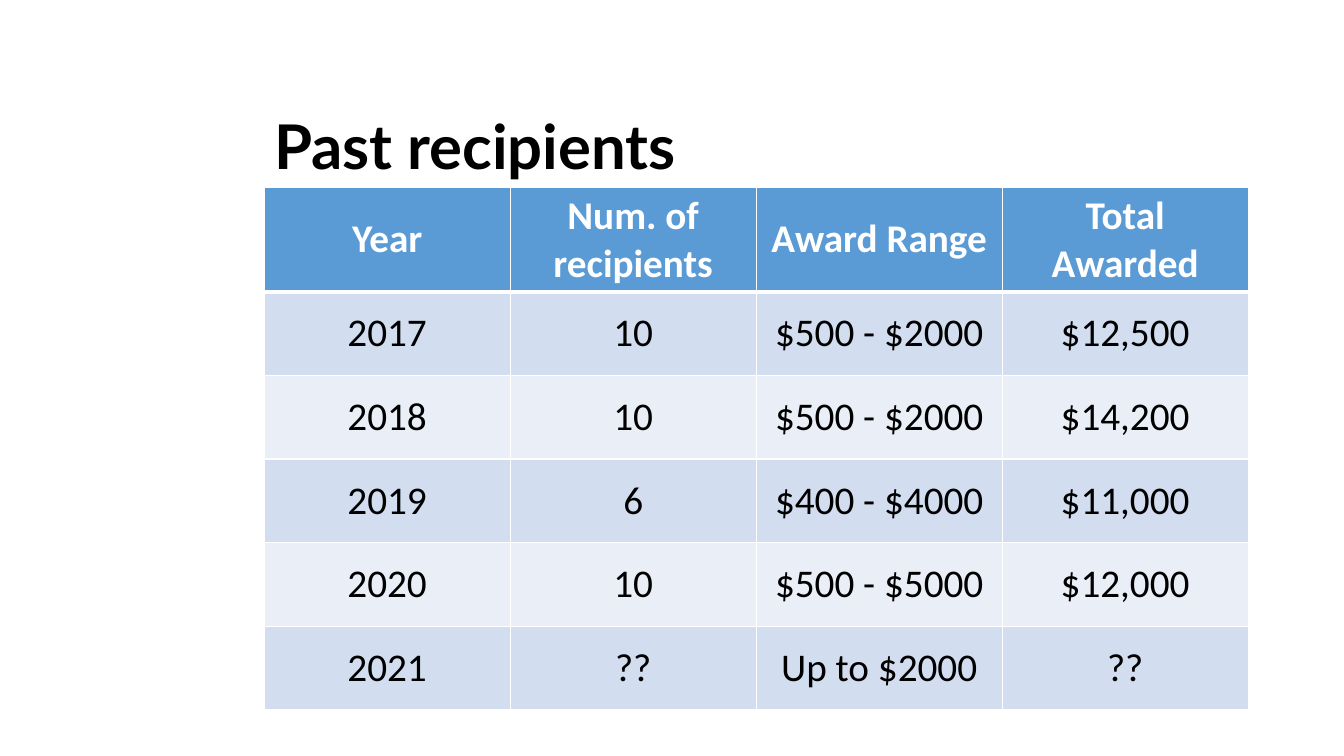
from lxml.etree import SubElement
from pptx import Presentation
from pptx.dml.color import RGBColor
from pptx.enum.text import MSO_ANCHOR, PP_ALIGN
from pptx.oxml.ns import qn
from pptx.util import Inches, Pt

COLORS = {
    "header": "5B9BD5",
    "odd": "D2DEEF",
    "even": "EAEFF7",
    "border": "FFFFFF",
    "header_text": "FFFFFF",
    "text": "000000",
}
LEFT, TABLE_TOP = 2.62, 1.86
COLUMN_WIDTH, ROW_HEIGHT = 2.44, 0.83
SLIDE_WIDTH, SLIDE_HEIGHT = 13.33, 7.5

RECIPIENTS = [
    ("Year", "Num. of recipients", "Award Range", "Total Awarded"),
    ("2017", "10", "$500 - $2000", "$12,500"),
    ("2018", "10", "$500 - $2000", "$14,200"),
    ("2019", "6", "$400 - $4000", "$11,000"),
    ("2020", "10", "$500 - $5000", "$12,000"),
    ("2021", "??", "Up to $2000", "??"),
]


def add_text(paragraph, text, font_name, size, color, bold):
    run = paragraph.add_run()
    run.text = text
    run.font.name = font_name
    run.font.size = Pt(size)
    run.font.bold = bold
    run.font.color.rgb = RGBColor.from_string(COLORS[color])


def set_borders(cell, widths):
    properties = cell._tc.get_or_add_tcPr()
    for position, (side, width) in enumerate(widths.items()):
        line = SubElement(properties, qn(f"a:{side}"), w=str(Pt(width)))
        fill = SubElement(line, qn("a:solidFill"))
        SubElement(fill, qn("a:srgbClr"), val=COLORS["border"])
        properties.insert(position, line)


presentation = Presentation()
presentation.slide_width = Inches(SLIDE_WIDTH)
presentation.slide_height = Inches(SLIDE_HEIGHT)
slide = presentation.slides.add_slide(presentation.slide_layouts[6])

title = slide.shapes.add_textbox(
    Inches(LEFT), Inches(0.76), Inches(SLIDE_WIDTH - LEFT), Inches(1.45)
)
title.text_frame.word_wrap = True
title.text_frame.vertical_anchor = MSO_ANCHOR.MIDDLE
title_paragraph = title.text_frame.paragraphs[0]
title_paragraph.line_spacing = 0.9
add_text(title_paragraph, "Past recipients", "Lato", 44, "text", True)

row_count, column_count = len(RECIPIENTS), len(RECIPIENTS[0])
table = slide.shapes.add_table(
    row_count,
    column_count,
    Inches(LEFT),
    Inches(TABLE_TOP),
    Inches(column_count * COLUMN_WIDTH),
    Inches(row_count * ROW_HEIGHT),
).table

for row_index, values in enumerate(RECIPIENTS):
    is_header = row_index == 0
    row_color = "header" if is_header else "odd" if row_index % 2 else "even"
    text_color = "header_text" if is_header else "text"
    top_width = 3 if row_index == 1 else 1
    bottom_width = 3 if is_header else 1
    for column_index, value in enumerate(values):
        cell = table.cell(row_index, column_index)
        cell.vertical_anchor = MSO_ANCHOR.MIDDLE
        cell.fill.solid()
        cell.fill.fore_color.rgb = RGBColor.from_string(COLORS[row_color])
        set_borders(cell, {"lnL": 1, "lnR": 1, "lnT": top_width, "lnB": bottom_width})
        paragraph = cell.text_frame.paragraphs[0]
        paragraph.alignment = PP_ALIGN.CENTER
        add_text(paragraph, value, "Calibri", 28, text_color, is_header)

presentation.save("out.pptx")
